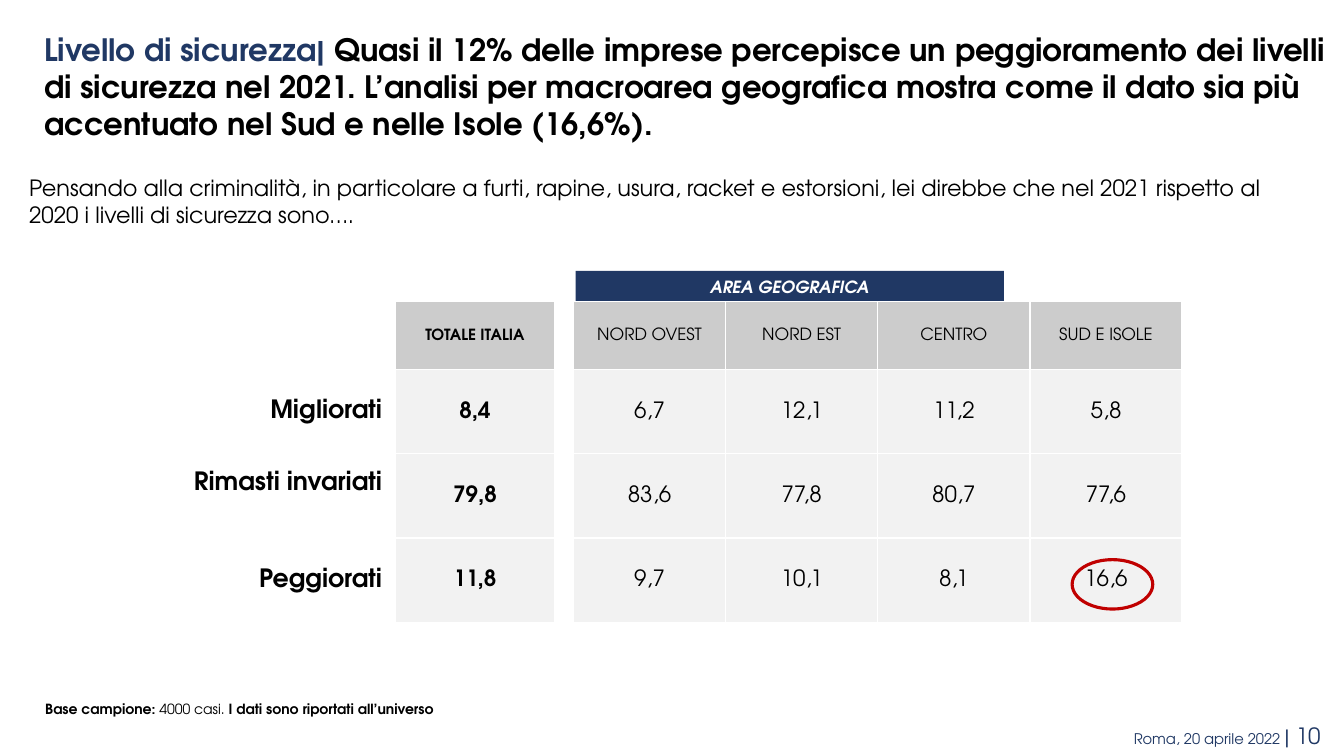
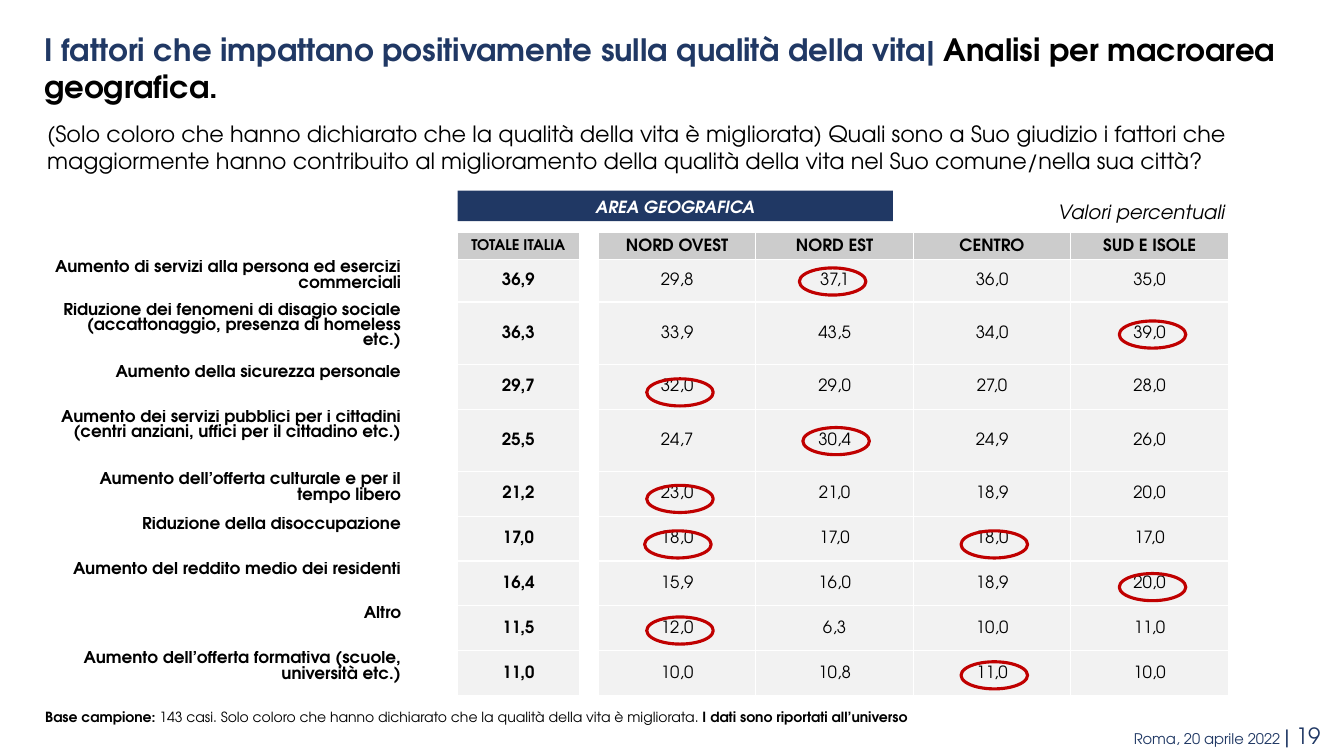
from dataclasses import dataclass
from lxml import etree
from pptx import Presentation
from pptx.dml.color import RGBColor
from pptx.enum import shapes, text
from pptx.oxml import ns
from pptx.util import Pt


@dataclass(frozen=True)
class Theme:
    """Hold the colours, font and type sizes of the deck."""
    font: str = "TeX Gyre Adventor"
    navy: str = "203864"
    black: str = "000000"
    white: str = "FFFFFF"
    head: str = "CCCCCC"
    body: str = "F2F2F2"
    red: str = "C00000"
    title: float = 22
    ask: float = 16
    unit: float = 14
    band: float = 12
    note: float = 10
    date: float = 10.5
    page: float = 16


@dataclass(frozen=True)
class Grid:
    """Describe the geometry and type of one data table."""
    left: float
    top: float
    cols: tuple
    rows: tuple
    total: float
    label: float
    value: float
    bold: bool
    anchor: object
    lead: object = None


T = Theme()
ALIGN = text.PP_ALIGN
MIDDLE = text.MSO_ANCHOR.MIDDLE
TOP = text.MSO_ANCHOR.TOP
AREAS = ("TOTALE ITALIA", "NORD OVEST", "NORD EST", "CENTRO", "SUD E ISOLE")
SLOTS = (0, 2, 5, 6, 7, 8)


def color(code):
    """Return the colour for a hex code."""
    return RGBColor.from_string(code)


def write(para, runs, align=ALIGN.LEFT):
    """Add (text, size, colour, bold, italic) runs to a paragraph."""
    para.alignment = align
    for words, size, tint, bold, slant in runs:
        run = para.add_run()
        run.text = words
        run.font.name = T.font
        run.font.size = Pt(size)
        run.font.color.rgb = color(tint)
        run.font.bold = bold
        run.font.italic = slant


def label(slide, box, runs, align=ALIGN.LEFT, inset=(7.2, 3.6)):
    """Place a wrapped text box."""
    frame = slide.shapes.add_textbox(*map(Pt, box)).text_frame
    frame.word_wrap = True
    frame.margin_left = frame.margin_right = Pt(inset[0])
    frame.margin_top = frame.margin_bottom = Pt(inset[1])
    write(frame.paragraphs[0], runs, align)


def title(slide, lead, rest):
    """Place the two-colour slide title."""
    label(slide, (26.6, 19.4, 928, 86),
          [(lead + "| ", T.title, T.navy, True, False),
           (rest, T.title, T.black, True, False)], inset=(5, 2.9))


def ask(slide, left, top, words):
    """Place the survey question."""
    label(slide, (left, top, 912, 46), [(words, T.ask, T.black, False, False)])


def note(slide, top, words):
    """Place the sample note."""
    parts = ("Base campione:", True), (words, False), ("I dati sono riportati all’universo", True)
    label(slide, (26.6, top, 663, 19.4),
          [(part, T.note, T.black, bold, False) for part, bold in parts], inset=(5.7, 3.6))


def footer(slide, page):
    """Place the date and page number."""
    label(slide, (451.4, 512, 499, 26.6),
          [("Roma, 20 aprile 2022 ", T.date, T.navy, False, False),
           (f"| {page}", T.page, T.navy, False, False)], ALIGN.RIGHT)


def band(slide, left, top, width):
    """Place the heading band over the area columns."""
    bar = slide.shapes.add_shape(shapes.MSO_SHAPE.RECTANGLE, *map(Pt, (left, top, width, 21.8)))
    bar.shadow.inherit = False
    bar.fill.solid()
    bar.fill.fore_color.rgb = color(T.navy)
    bar.line.fill.background()
    frame = bar.text_frame
    frame.vertical_anchor = MIDDLE
    para = frame.paragraphs[0]
    para.line_spacing = 1.1
    write(para, [("AREA GEOGRAFICA", T.band, T.white, True, True)], ALIGN.CENTER)


def edge(cell):
    """Draw white borders around a cell."""
    props = cell._tc.get_or_add_tcPr()
    for side in ("lnL", "lnR", "lnT", "lnB"):
        line = etree.SubElement(props, ns.qn("a:" + side), w=str(Pt(1)))
        fill = etree.SubElement(line, ns.qn("a:solidFill"))
        etree.SubElement(fill, ns.qn("a:srgbClr"), val=T.white)


def style(grid, row, slot):
    """Return the fill, size and weight of a table cell."""
    if slot == 0:
        return T.white, grid.label, True
    if row == 0:
        size = grid.total if slot == 1 else T.band
        return T.head, size, grid.bold or slot == 1
    return T.body, grid.value, slot == 1


def table(slide, grid, data):
    """Place the data table with its narrow spacer columns."""
    box = grid.left, grid.top, sum(grid.cols), sum(grid.rows)
    item = slide.shapes.add_table(len(grid.rows), len(grid.cols), *map(Pt, box)).table
    item.first_row = item.horz_banding = False
    for col, width in zip(item.columns, grid.cols):
        col.width = Pt(width)
    lines = [("",) + AREAS] + [(name, *nums.split()) for name, nums in data]
    for i, line in enumerate(lines):
        item.rows[i].height = Pt(grid.rows[i])
        for j in range(len(grid.cols)):
            cell = item.cell(i, j)
            edge(cell)
            cell.margin_left = cell.margin_right = cell.margin_top = Pt(0.7)
            cell.margin_bottom = Pt(0)
            cell.vertical_anchor = MIDDLE
            para = cell.text_frame.paragraphs[0]
            slot = SLOTS.index(j) if j in SLOTS else 0
            fill, size, bold = style(grid, i, slot)
            cell.fill.solid()
            cell.fill.fore_color.rgb = color(fill)
            if j not in SLOTS or not line[slot]:
                etree.SubElement(para._p, ns.qn("a:endParaRPr"), sz="600")
                continue
            if slot == 0:
                cell.vertical_anchor = grid.anchor
                if grid.lead:
                    para.line_spacing = grid.lead
            write(para, [(line[slot], size, T.black, bold, False)],
                  ALIGN.CENTER if slot else ALIGN.RIGHT)
    return item


def ring(slide, grid, row, area, size, shift):
    """Circle one value, shifted from the centre of its cell."""
    col = SLOTS[area + 1]
    wide, high = size
    left = grid.left + sum(grid.cols[:col]) + (grid.cols[col] - wide) / 2 + shift[0]
    top = grid.top + sum(grid.rows[:row]) + (grid.rows[row] - high) / 2 + shift[1]
    oval = slide.shapes.add_shape(shapes.MSO_SHAPE.OVAL, *map(Pt, (left, top, wide, high)))
    oval.shadow.inherit = False
    oval.fill.background()
    oval.line.color.rgb = color(T.red)
    oval.line.width = Pt(2.25)


def safety(slide):
    """Build the slide on perceived safety."""
    footer(slide, 10)
    title(slide, "Livello di sicurezza",
          "Quasi il 12% delle imprese percepisce un peggioramento dei livelli di sicurezza "
          "nel 2021. L’analisi per macroarea geografica mostra come il dato sia più accentuato "
          "nel Sud e nelle Isole (16,6%).")
    ask(slide, 13.7, 121,
        "Pensando alla criminalità, in particolare a furti, rapine, usura, racket e estorsioni, "
        "lei direbbe che nel 2021 rispetto al 2020 i livelli di sicurezza sono….")
    note(slide, 496.8, " 4000 casi. ")
    band(slide, 411.1, 193.5, 306)
    grid = Grid(26.6, 215.5, (247, 9, 113.5, 4.3, 9.3) + (108.7,) * 4 + (9.3,),
                (48.4,) + (60.2,) * 3, 11, 18, 16, False, MIDDLE)
    item = table(slide, grid, [
        ("Migliorati", "8,4 6,7 12,1 11,2 5,8"),
        ("Rimasti invariati", "79,8 83,6 77,8 80,7 77,6"),
        ("Peggiorati", "11,8 9,7 10,1 8,1 16,6")])
    item.cell(2, 0).margin_bottom = Pt(18)
    ring(slide, grid, 3, 4, (57.6, 35.3), (4.5, 3))


def factors(slide):
    """Build the slide on the factors behind quality of life."""
    footer(slide, 19)
    ask(slide, 26.6, 82,
        "(Solo coloro che hanno dichiarato che la qualità della vita è migliorata) Quali sono a "
        "Suo giudizio i fattori che maggiormente hanno contribuito al miglioramento della "
        "qualità della vita nel Suo comune/nella sua città?")
    note(slide, 502.6,
         " 143 casi. Solo coloro che hanno dichiarato che la qualità della vita è migliorata. ")
    label(slide, (748.8, 139, 168, 24.5), [("Valori percentuali", T.unit, T.black, False, True)])
    title(slide, "I fattori che impattano positivamente sulla qualità della vita",
          "Analisi per macroarea geografica.")
    band(slide, 326.9, 136.1, 311)
    grid = Grid(31.7, 166, (255.5, 39.6, 87, 4.3, 9.4) + (112.5,) * 4 + (9.4,),
                (19.5, 30.2, 44.6, 32, 44.6) + (32,) * 5, 10.5, 12, 12, True, TOP, Pt(11))
    table(slide, grid, [
        ("Aumento di servizi alla persona ed esercizi commerciali", "36,9 29,8 37,1 36,0 35,0"),
        ("Riduzione dei fenomeni di disagio sociale (accattonaggio, presenza di homeless etc.)",
         "36,3 33,9 43,5 34,0 39,0"),
        ("Aumento della sicurezza personale", "29,7 32,0 29,0 27,0 28,0"),
        ("Aumento dei servizi pubblici per i cittadini (centri anziani, uffici per il cittadino "
         "etc.)", "25,5 24,7 30,4 24,9 26,0"),
        ("Aumento dell’offerta culturale e per il tempo libero", "21,2 23,0 21,0 18,9 20,0"),
        ("Riduzione della disoccupazione", "17,0 18,0 17,0 18,0 17,0"),
        ("Aumento del reddito medio dei residenti", "16,4 15,9 16,0 18,9 20,0"),
        ("Altro", "11,5 12,0 6,3 10,0 11,0"),
        ("Aumento dell’offerta formativa (scuole, università etc.)", "11,0 10,0 10,8 11,0 10,0")])
    marks = ((1, 2, -1.5, 0.5), (2, 4, 2, 1), (3, 1, 2, 4), (8, 1, 2, 1.5), (4, 2, 1, 0.5),
             (5, 1, 2, 3.5), (6, 1, 0.5, 4), (6, 3, 1.5, 4), (7, 4, 2, 2.5), (9, 3, 1.5, 1.5))
    for row, area, dx, dy in marks:
        ring(slide, grid, row, area, (47.5, 19.4), (dx, dy))


def main():
    """Build and save the deck."""
    deck = Presentation()
    deck.slide_width, deck.slide_height = Pt(960), Pt(540)
    for build in (safety, factors):
        build(deck.slides.add_slide(deck.slide_layouts[6]))
    deck.save("out.pptx")


if __name__ == "__main__":
    main()
